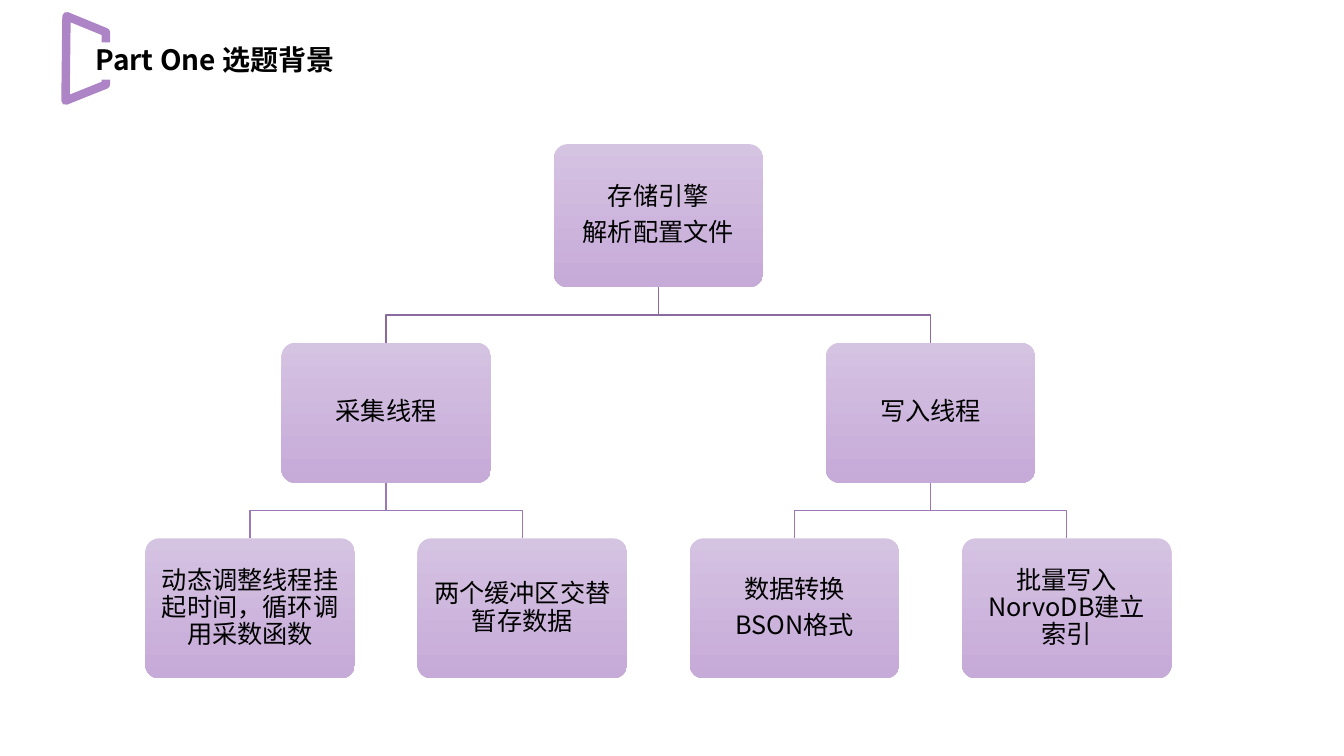
import pptx
import pptx.dml.color
import pptx.enum.shapes
import pptx.enum.text
import pptx.oxml.ns
import pptx.util
from lxml import etree

FONT = "Noto Sans CJK SC"
Inches = pptx.util.Inches
Pt = pptx.util.Pt
SHAPE = pptx.enum.shapes.MSO_SHAPE
ALIGN = pptx.enum.text.PP_ALIGN


def color(value):
    return pptx.dml.color.RGBColor.from_string(value)


def write(box, lines, size=18, bold=False, align=ALIGN.CENTER, inset=0.11, after=6.3):
    frame = box.text_frame
    frame.word_wrap = True
    frame.vertical_anchor = pptx.enum.text.MSO_ANCHOR.MIDDLE
    frame.margin_left = frame.margin_right = Inches(inset)
    frame.margin_top = frame.margin_bottom = Inches(0.05)
    for index, line in enumerate(lines):
        para = frame.add_paragraph() if index else frame.paragraphs[0]
        para.alignment = align
        para.line_spacing = 0.9
        para.space_after = Pt(after)
        span = para.add_run()
        span.text = line
        span.font.size = Pt(size)
        span.font.bold = bold
        span.font.color.rgb = color("000000")
        span.font.name = FONT
        east_asian = etree.SubElement(span.font._element, pptx.oxml.ns.qn("a:ea"))
        east_asian.set("typeface", FONT)


deck = pptx.Presentation()
deck.slide_width, deck.slide_height = Inches(13.33), Inches(7.5)
page = deck.slides.add_slide(deck.slide_layouts[6])

# Tree grid: columns are half the distance between neighbouring leaves
FIRST_COLUMN, COLUMN = 2.48, 1.35
BOX_WIDTH, ROW_GAP = 2.08, 0.55
ROW_HEIGHTS = [1.42, 1.39, 1.39]
ROW_TOPS = [1.43 + sum(ROW_HEIGHTS[:row]) + row * ROW_GAP for row in range(3)]
LINK_COLORS = {1: "8B6A9F", 2: "9D78B4"}

# Each node: row, column, column of its parent, lines of text
nodes = [
    (0, 3, None, ["存储引擎", "解析配置文件"]),
    (1, 1, 3, ["采集线程"]),
    (1, 5, 3, ["写入线程"]),
    (2, 0, 1, ["动态调整线程挂起时间，循环调用采数函数"]),
    (2, 2, 1, ["两个缓冲区交替暂存数据"]),
    (2, 4, 5, ["数据转换", "BSON格式"]),
    (2, 6, 5, ["批量写入NorvoDB建立索引"]),
]

# Outlines: the title frame, then one bent link per child node
outlines = [([(1.05, 0.32), (0.66, 0.16), (0.65, 1), (1.05, 0.84)], True, "AD84C6", 6)]
for row, column, parent, lines in nodes:
    if parent is not None:
        child_x = FIRST_COLUMN + column * COLUMN
        parent_x = FIRST_COLUMN + parent * COLUMN
        top = ROW_TOPS[row]
        middle = top - ROW_GAP / 2
        bend = [(parent_x, top - ROW_GAP), (parent_x, middle), (child_x, middle), (child_x, top)]
        outlines.append((bend, False, LINK_COLORS[row], 1))

for points, closed, stroke, width in outlines:
    corners = [(Inches(x), Inches(y)) for x, y in points]
    builder = page.shapes.build_freeform(*corners[0])
    builder.add_line_segments(corners[1:], close=closed)
    outline = builder.convert_to_shape()
    outline.shadow.inherit = False
    outline.fill.background()
    outline.line.color.rgb = color(stroke)
    outline.line.width = Pt(width)

# Title
title = page.shapes.add_shape(SHAPE.RECTANGLE, Inches(0.85), Inches(0.42), Inches(3.2), Inches(0.37))
title.shadow.inherit = False
title.fill.solid()
title.fill.fore_color.rgb = color("FFFFFF")
title.line.fill.background()
write(title, ["Part One 选题背景"], size=20, bold=True, align=ALIGN.LEFT, inset=0.1, after=0)

# Tree boxes
for row, column, parent, lines in nodes:
    left = FIRST_COLUMN + column * COLUMN - BOX_WIDTH / 2
    box = page.shapes.add_shape(
        SHAPE.ROUNDED_RECTANGLE,
        Inches(left), Inches(ROW_TOPS[row]), Inches(BOX_WIDTH), Inches(ROW_HEIGHTS[row]),
    )
    box.adjustments[0] = 0.1
    box.shadow.inherit = False
    box.line.fill.background()
    box.fill.gradient()
    box.fill.gradient_angle = 270
    for stop, shade in zip(box.fill.gradient_stops, ["D5C3E2", "C6AAD8"]):
        stop.color.rgb = color(shade)
    write(box, lines)

deck.save("out.pptx")
